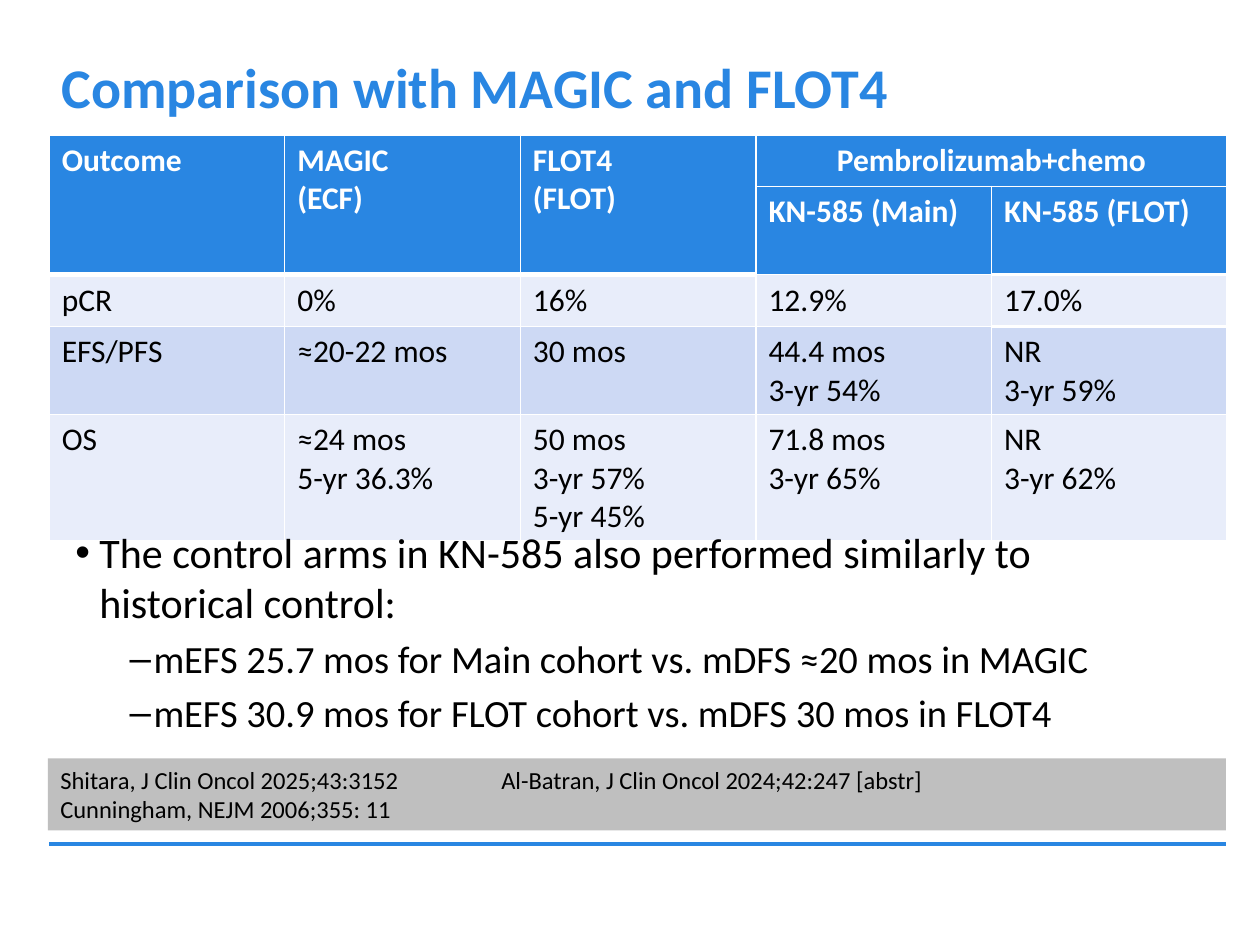
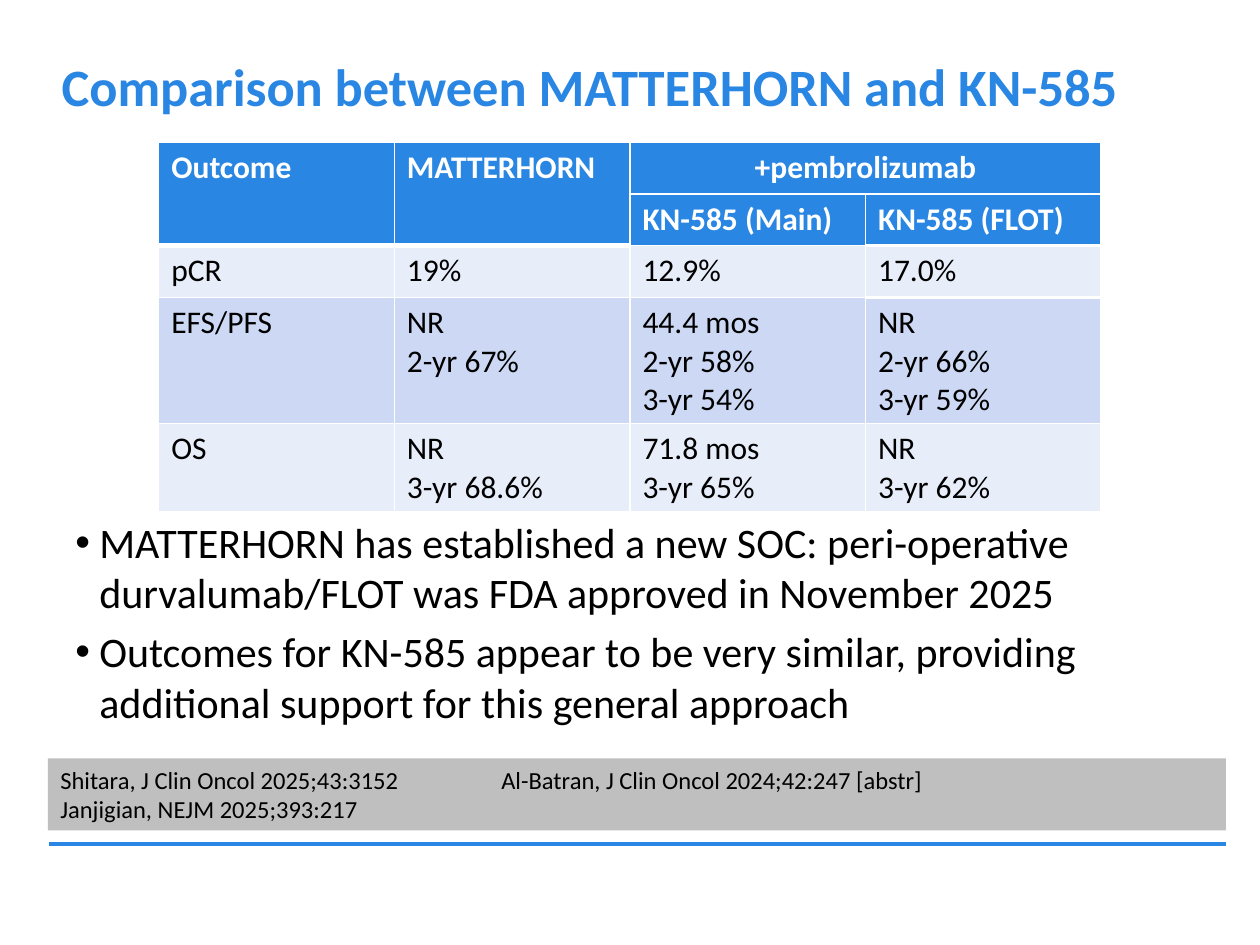
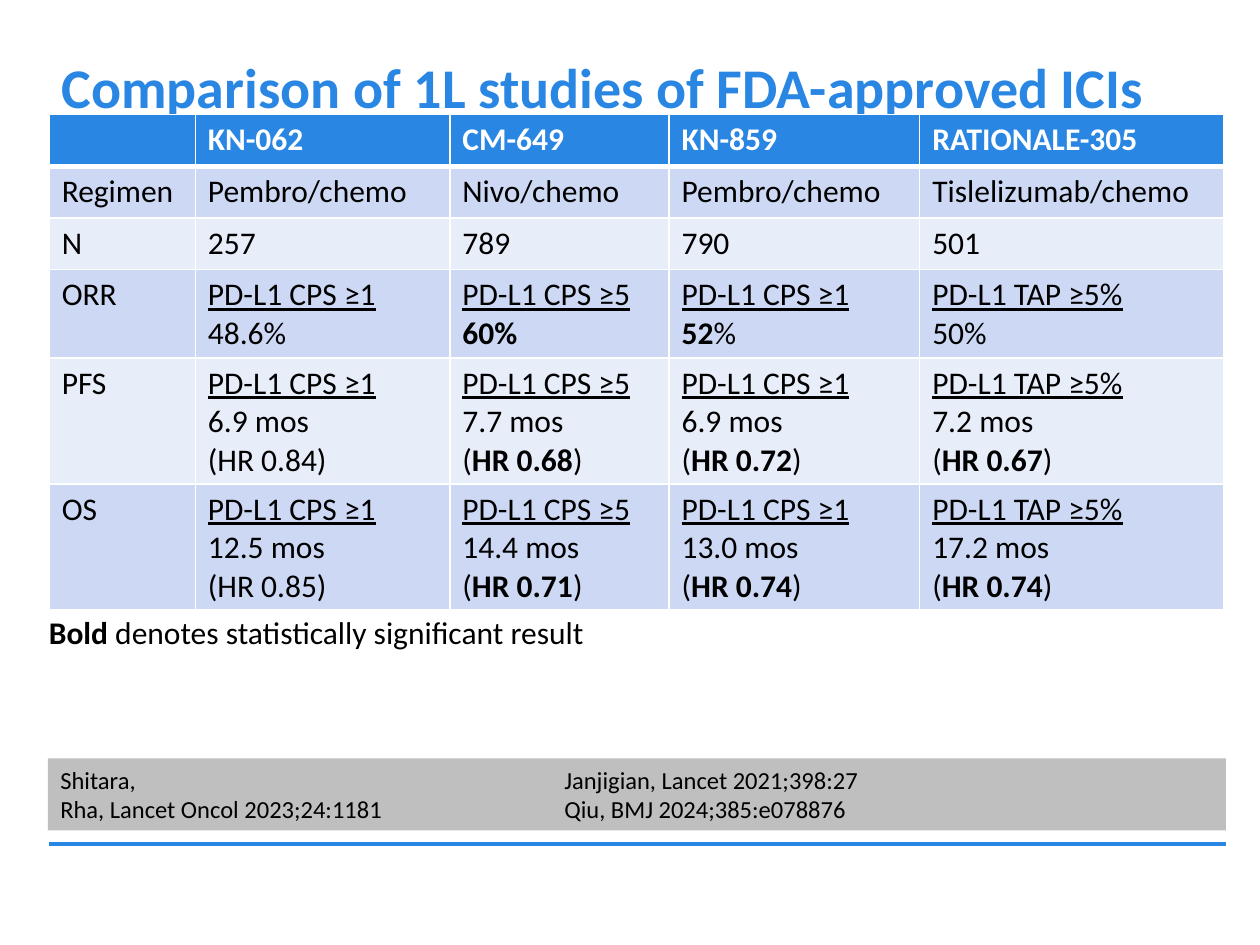
from dataclasses import dataclass

from lxml.etree import SubElement
from pptx import Presentation
from pptx.dml.color import RGBColor
from pptx.enum.shapes import MSO_CONNECTOR, MSO_SHAPE
from pptx.enum.text import MSO_ANCHOR, PP_ALIGN
from pptx.oxml import parse_xml
from pptx.oxml.ns import nsdecls, qn
from pptx.util import Inches, Pt


@dataclass(frozen=True)
class Theme:
    font: str = "Calibri"
    accent: str = "2986E2"
    white: str = "FFFFFF"
    black: str = "000000"
    footer_fill: str = "BFBFBF"
    dark_band: str = "CDD9F4"
    light_band: str = "E8EDFA"
    title_size: int = 32
    long_title_size: int = 30
    bullet_size: int = 24
    sub_bullet_size: int = 22
    table_size: int = 18
    footer_size: int = 14
    left: float = 0.39
    width: float = 9.35
    thin_rule: float = 1
    rule: float = 2.25
    thick_rule: float = 3


THEME = Theme()
LINE_HEIGHTS = {1: 0.41, 2: 0.7, 3: 1.0}


def color(value):
    return RGBColor.from_string(value)


def write_text(frame, text, *, size, fill=THEME.black, bold=False, align=None,
               bullets=None, tab=None):
    """Write one paragraph per line; *stars* mark bold, a leading _ underlines."""
    frame.word_wrap = True
    for index, line in enumerate(text.split("\n")):
        paragraph = frame.paragraphs[0] if index == 0 else frame.add_paragraph()
        line_size = size
        if bullets:
            line_size = add_bullet(paragraph, bullets[index])
            if index:
                paragraph.space_before = Pt(line_size * 0.2)
        if tab:
            tabs = SubElement(paragraph._p.get_or_add_pPr(), qn("a:tabLst"))
            SubElement(tabs, qn("a:tab"), pos=str(Inches(tab)), algn="l")
        if align is not None:
            paragraph.alignment = align
        underline = line.startswith("_")
        for part, piece in enumerate(line.lstrip("_").split("*")):
            if piece:
                run = paragraph.add_run()
                run.text = piece
                run.font.name = THEME.font
                run.font.size = Pt(line_size)
                run.font.color.rgb = color(fill)
                run.font.bold = bold or part % 2 == 1
                run.font.underline = underline


def add_bullet(paragraph, level):
    """Set the indent and mark of a level and return its type size."""
    margin, mark, size = [(0.19, "•", THEME.bullet_size),
                          (0.62, "–", THEME.sub_bullet_size)][level]
    properties = paragraph._p.get_or_add_pPr()
    properties.set("marL", str(Inches(margin)))
    properties.set("indent", str(Inches(-0.19)))
    paragraph.level = level
    SubElement(properties, qn("a:buFont"), typeface="Arial")
    SubElement(properties, qn("a:buChar"), char=mark)
    return size


def add_text_box(slide, text, left, top, width, height, anchor=MSO_ANCHOR.TOP, **text_format):
    shape = slide.shapes.add_textbox(Inches(left), Inches(top), Inches(width), Inches(height))
    shape.text_frame.vertical_anchor = anchor
    write_text(shape.text_frame, text, **text_format)


def add_bullets(slide, text, top, height, levels):
    add_text_box(slide, text, 0.5, top, 8.99, height, size=THEME.bullet_size, bullets=levels)


def add_references(slide, text, tab):
    bar = slide.shapes.add_shape(MSO_SHAPE.RECTANGLE, Inches(0.38), Inches(6.02),
                                 Inches(THEME.width), Inches(0.57))
    bar.shadow.inherit = False
    bar.fill.solid()
    bar.fill.fore_color.rgb = color(THEME.footer_fill)
    bar.line.fill.background()
    bar.text_frame.vertical_anchor = MSO_ANCHOR.TOP
    write_text(bar.text_frame, text, size=THEME.footer_size, align=PP_ALIGN.LEFT, tab=tab)


def add_bottom_rule(slide):
    rule = slide.shapes.add_connector(MSO_CONNECTOR.STRAIGHT, Inches(THEME.left), Inches(6.7),
                                      Inches(9.73), Inches(6.7))
    rule.line.color.rgb = color(THEME.accent)
    rule.line.width = Pt(THEME.rule)
    SubElement(rule._element.spPr, qn("a:effectLst"))


def add_slide(presentation, title, references, tab, title_size=THEME.title_size):
    slide = presentation.slides.add_slide(presentation.slide_layouts[6])
    add_bottom_rule(slide)
    add_text_box(slide, title, THEME.left, 0.09, THEME.width, 1.18, MSO_ANCHOR.MIDDLE,
                 size=title_size, fill=THEME.accent, bold=True)
    add_references(slide, references, tab)
    return slide


def set_borders(cell, top, bottom):
    properties = cell._tc.get_or_add_tcPr()
    widths = {"lnL": THEME.thin_rule, "lnR": THEME.thin_rule, "lnT": top, "lnB": bottom}
    for index, (side, width) in enumerate(widths.items()):
        properties.insert(index, parse_xml(
            f'<a:{side} {nsdecls("a")} w="{Pt(width)}"><a:solidFill>'
            f'<a:srgbClr val="{THEME.white}"/></a:solidFill></a:{side}>'))


def add_table(slide, rows, left, top, widths, heavy_rules, header_rows=1):
    """Draw rows of text; heavy_rules maps (row, column) to the rule below that cell."""
    heights = [LINE_HEIGHTS[max(text.count("\n") + 1 for text in row)] for row in rows]
    if header_rows == 2:
        label_lines = max(text.count("\n") + 1 for text in rows[0])
        heights[:2] = [LINE_HEIGHTS[1], LINE_HEIGHTS[label_lines]]
    table = slide.shapes.add_table(len(rows), len(widths), Inches(left), Inches(top),
                                   Inches(sum(widths)), Inches(sum(heights))).table
    for column, width in zip(table.columns, widths):
        column.width = Inches(width)
    for row, height in zip(table.rows, heights):
        row.height = Inches(height)
    for row, texts in enumerate(rows):
        header = row < header_rows
        band = THEME.dark_band if row % 2 else THEME.light_band
        for column, text in enumerate(texts):
            cell = table.cell(row, column)
            cell.fill.solid()
            cell.fill.fore_color.rgb = color(THEME.accent if header else band)
            set_borders(cell, heavy_rules.get((row - 1, column), THEME.thin_rule),
                        heavy_rules.get((row, column), THEME.thin_rule))
            write_text(cell.text_frame, text, size=THEME.table_size, bold=header,
                       fill=THEME.white if header else THEME.black)
    return table


def add_outcome_table(slide, rows, left, top):
    """Draw a table whose last two columns share a heading over two sub-headings."""
    last = len(rows[0]) - 1
    heavy_rules = {(row, column): THEME.thick_rule
                   for row in range(2) for column in range(last - 1)}
    heavy_rules |= {(1, last): THEME.rule, (2, last): THEME.rule}
    table = add_table(slide, rows, left, top, [1.87] * (last + 1), heavy_rules, header_rows=2)
    for column in range(last - 1):
        table.cell(0, column).merge(table.cell(1, column))
    shared_heading = table.cell(0, last - 1)
    shared_heading.merge(table.cell(0, last))
    shared_heading.text_frame.paragraphs[0].alignment = PP_ALIGN.CENTER


def add_magic_slide(presentation):
    slide = add_slide(
        presentation, "Comparison with MAGIC and FLOT4",
        "Shitara, J Clin Oncol 2025;43:3152\tAl-Batran, J Clin Oncol 2024;42:247 [abstr]\n"
        "Cunningham, NEJM 2006;355: 11", tab=3.5)
    add_outcome_table(slide, [
        ["Outcome", "MAGIC\n(ECF)", "FLOT4\n(FLOT)", "Pembrolizumab+chemo", ""],
        ["", "", "", "KN-585 (Main)", "KN-585 (FLOT)"],
        ["pCR", "0%", "16%", "12.9%", "17.0%"],
        ["EFS/PFS", "≈20-22 mos", "30 mos", "44.4 mos\n3-yr 54%", "NR\n3-yr 59%"],
        ["OS", "≈24 mos\n5-yr 36.3%", "50 mos\n3-yr 57%\n5-yr 45%",
         "71.8 mos\n3-yr 65%", "NR\n3-yr 62%"],
    ], THEME.left, 1.07)
    add_bullets(
        slide,
        "The control arms in KN-585 also performed similarly to historical control:\n"
        "mEFS 25.7 mos for Main cohort vs. mDFS ≈20 mos in MAGIC\n"
        "mEFS 30.9 mos for FLOT cohort vs. mDFS 30 mos in FLOT4",
        4.13, 2.01, levels=[0, 1, 1])


def add_matterhorn_slide(presentation):
    slide = add_slide(
        presentation, "Comparison between MATTERHORN and KN-585",
        "Shitara, J Clin Oncol 2025;43:3152\tAl-Batran, J Clin Oncol 2024;42:247 [abstr]\n"
        "Janjigian, NEJM 2025;393:217", tab=3.5, title_size=THEME.long_title_size)
    add_outcome_table(slide, [
        ["Outcome", "MATTERHORN", "+pembrolizumab", ""],
        ["", "", "KN-585 (Main)", "KN-585 (FLOT)"],
        ["pCR", "19%", "12.9%", "17.0%"],
        ["EFS/PFS", "NR\n2-yr 67%", "44.4 mos\n2-yr 58%\n3-yr 54%",
         "NR\n2-yr 66%\n3-yr 59%"],
        ["OS", "NR\n3-yr 68.6%", "71.8 mos\n3-yr 65%", "NR\n3-yr 62%"],
    ], 1.26, 1.13)
    add_bullets(
        slide,
        "MATTERHORN has established a new SOC: peri-operative durvalumab/FLOT "
        "was FDA approved in November 2025\n"
        "Outcomes for KN-585 appear to be very similar, providing additional "
        "support for this general approach",
        4.05, 1.97, levels=[0, 0])


def add_first_line_slide(presentation):
    slide = add_slide(
        presentation, "Comparison of 1L studies of FDA-approved ICIs",
        "Shitara,\tJanjigian, Lancet 2021;398:27\n"
        "Rha, Lancet Oncol 2023;24:1181\tQiu, BMJ 2024;385:e078876", tab=4)
    subgroups = ["PD-L1 CPS ≥1", "PD-L1 CPS ≥5", "PD-L1 CPS ≥1", "PD-L1 TAP ≥5%"]

    def subgroup_row(label, results):
        return [label] + [f"_{group}\n{result}" for group, result in zip(subgroups, results)]

    rows = [
        ["", "KN-062", "CM-649", "KN-859", "RATIONALE-305"],
        ["Regimen", "Pembro/chemo", "Nivo/chemo", "Pembro/chemo", "Tislelizumab/chemo"],
        ["N", "257", "789", "790", "501"],
        subgroup_row("ORR", ["48.6%", "*60%*", "*52*%", "50%"]),
        subgroup_row("PFS", ["6.9 mos\n(HR 0.84)", "7.7 mos\n(*HR 0.68*)",
                             "6.9 mos\n(*HR 0.72*)", "7.2 mos\n(*HR 0.67*)"]),
        subgroup_row("OS", ["12.5 mos\n(HR 0.85)", "14.4 mos\n(*HR 0.71*)",
                            "13.0 mos\n(*HR 0.74*)", "17.2 mos\n(*HR 0.74*)"]),
    ]
    add_table(slide, rows, THEME.left, 0.91, [1.16, 2.02, 1.74, 1.99, 2.41],
              {(0, column): THEME.thick_rule for column in range(5)})
    add_text_box(slide, "*Bold* denotes statistically significant result",
                 0.29, 4.82, 4.6, 0.4, size=THEME.table_size)


def main():
    presentation = Presentation()
    presentation.slide_width = Inches(10)
    presentation.slide_height = Inches(7.5)
    add_magic_slide(presentation)
    add_matterhorn_slide(presentation)
    add_first_line_slide(presentation)
    presentation.save("out.pptx")


if __name__ == "__main__":
    main()
